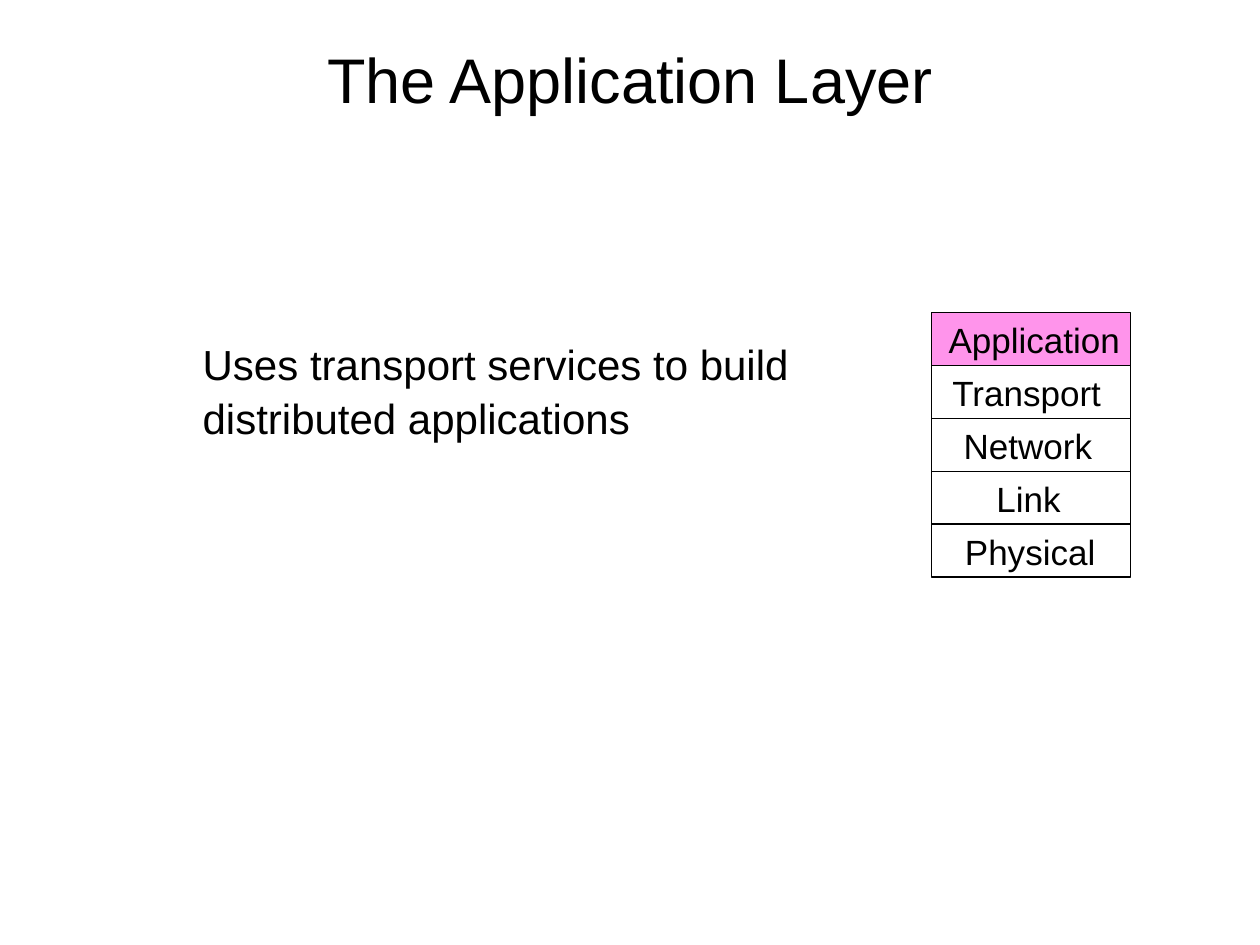
from dataclasses import dataclass

from lxml.etree import SubElement
from pptx import Presentation
from pptx.dml.color import RGBColor
from pptx.enum.shapes import MSO_SHAPE
from pptx.enum.text import MSO_ANCHOR, MSO_AUTO_SIZE, PP_ALIGN
from pptx.oxml.ns import qn
from pptx.util import Inches, Pt


@dataclass(frozen=True)
class Theme:
    font: str = "Arial"
    ink: RGBColor = RGBColor(0x00, 0x00, 0x00)
    highlight: RGBColor = RGBColor(0xFF, 0x2B, 0xD8)
    highlight_opacity: int = 50
    title_size: int = 36
    body_size: int = 24
    label_size: int = 20
    outline: float = 0.75


@dataclass(frozen=True)
class Box:
    left: float
    top: float
    width: float
    height: float

    def lengths(self) -> tuple:
        return tuple(Inches(v) for v in (self.left, self.top, self.width, self.height))


@dataclass(frozen=True)
class Stack:
    left: float
    top: float
    width: float
    row_height: float

    def row(self, index: int) -> Box:
        return Box(self.left, self.top + index * self.row_height, self.width, self.row_height)


@dataclass(frozen=True)
class Layer:
    name: str
    label_indent: float
    label_width: float
    highlighted: bool = False


THEME = Theme()
PAGE_WIDTH, PAGE_HEIGHT = 10, 7.5
STACK = Stack(left=7.39, top=2.48, width=1.58, row_height=0.42)
LAYERS = (
    Layer("Application", 0.04, 1.56, highlighted=True),
    Layer("Transport", 0.07, 1.39),
    Layer("Network", 0.16, 1.22),
    Layer("Link", 0.42, 0.72),
    Layer("Physical", 0.17, 1.24),
)


def add_text(page, box: Box, text: str, size: int, wrap: bool = True):
    shape = page.shapes.add_textbox(*box.lengths())
    frame = shape.text_frame
    frame.text = text
    frame.word_wrap = wrap
    para = frame.paragraphs[0]
    for span in para.runs:
        span.font.name = THEME.font
        span.font.size = Pt(size)
        span.font.color.rgb = THEME.ink
    return frame, para


def add_cell(page, box: Box, highlighted: bool) -> None:
    cell = page.shapes.add_shape(MSO_SHAPE.RECTANGLE, *box.lengths())
    cell.shadow.inherit = False
    cell.line.color.rgb = THEME.ink
    cell.line.width = Pt(THEME.outline)
    if highlighted:
        cell.fill.solid()
        cell.fill.fore_color.rgb = THEME.highlight
        color = cell.fill._xPr.find(qn("a:solidFill")).find(qn("a:srgbClr"))
        SubElement(color, qn("a:alpha")).set("val", str(THEME.highlight_opacity * 1000))
    else:
        cell.fill.background()


def add_label(page, box: Box, layer: Layer) -> None:
    label_box = Box(box.left + layer.label_indent, box.top, layer.label_width, box.height)
    frame, _ = add_text(page, label_box, layer.name, THEME.label_size, wrap=False)
    frame.auto_size = MSO_AUTO_SIZE.SHAPE_TO_FIT_TEXT


def main() -> None:
    deck = Presentation()
    deck.slide_width, deck.slide_height = Inches(PAGE_WIDTH), Inches(PAGE_HEIGHT)
    page = deck.slides.add_slide(deck.slide_layouts[6])

    title_box = Box(0, 0, PAGE_WIDTH, PAGE_HEIGHT / 6)
    frame, para = add_text(page, title_box, "The Application Layer", THEME.title_size)
    frame.vertical_anchor = MSO_ANCHOR.MIDDLE
    para.alignment = PP_ALIGN.CENTER

    body_box = Box(1.51, 2.61, 5.55, 4.4)
    body_text = "Uses transport services to build distributed applications"
    _, para = add_text(page, body_box, body_text, THEME.body_size)
    para.space_before = Pt(18)
    para.line_spacing = 1.07

    for index, layer in enumerate(LAYERS):
        add_cell(page, STACK.row(index), layer.highlighted)
    for index, layer in enumerate(LAYERS):
        add_label(page, STACK.row(index), layer)

    deck.save("out.pptx")


if __name__ == "__main__":
    main()
